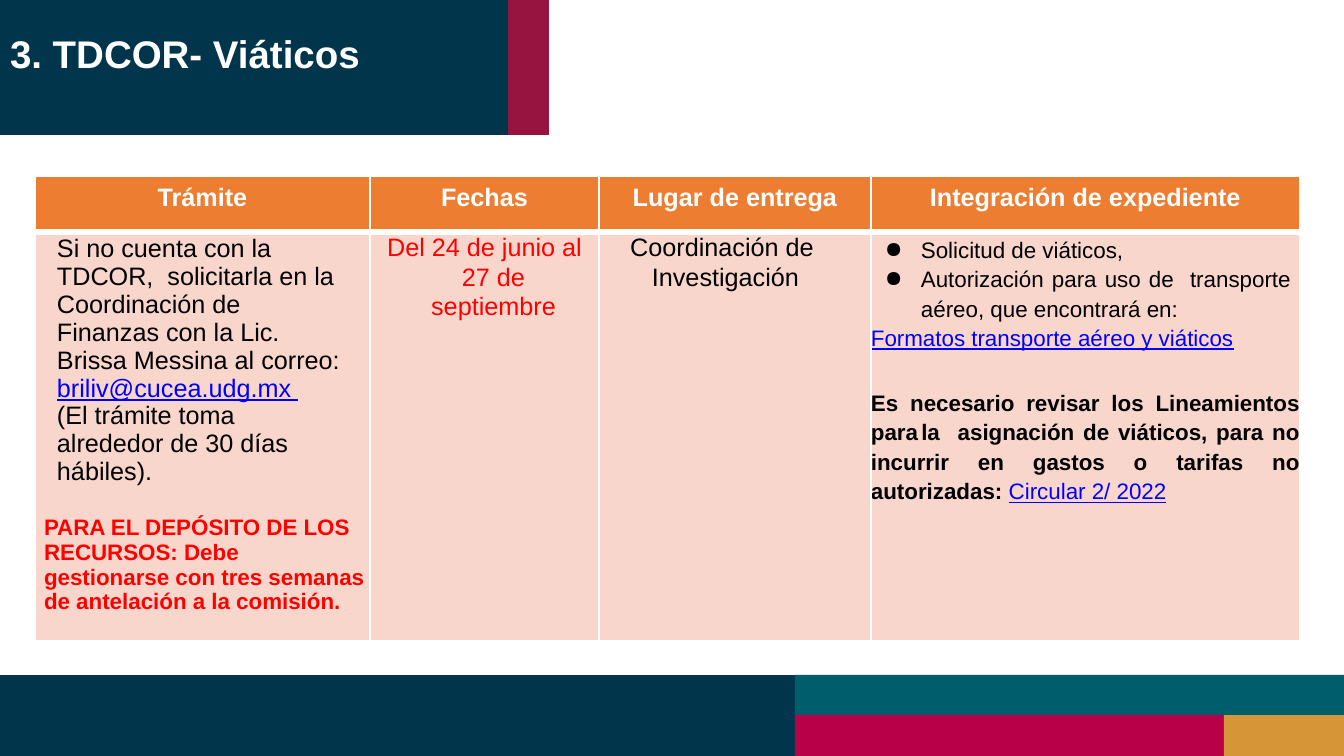
from dataclasses import dataclass

from lxml.etree import SubElement
from pptx import Presentation
from pptx.dml.color import RGBColor
from pptx.enum.shapes import MSO_SHAPE
from pptx.enum.text import PP_ALIGN
from pptx.oxml.ns import qn
from pptx.util import Pt


@dataclass(frozen=True)
class Theme:
    font: str = "Arial"
    navy: str = "00354C"
    wine: str = "971340"
    teal: str = "005D6C"
    pink: str = "B80048"
    gold: str = "D69638"
    orange: str = "ED7D31"
    peach: str = "F8D6CC"
    white: str = "FFFFFF"
    black: str = "000000"
    red: str = "FF0000"
    blue: str = "0000FF"
    title: float = 27.5
    large: float = 18
    small: float = 16
    thin: float = 1.5
    thick: float = 4.25


T = Theme()
WIDE, HIGH = 1344, 756
SCALE = 914400 / 100.8


def px(n):
    return round(n * SCALE)


def block(slide, box, color):
    shape = slide.shapes.add_shape(MSO_SHAPE.RECTANGLE, *map(px, box))
    shape.shadow.inherit = False
    shape.fill.solid()
    shape.fill.fore_color.rgb = RGBColor.from_string(color)
    shape.line.fill.background()


def style(font, size, color, bold=False):
    font.name, font.size, font.bold = T.font, Pt(size), bold
    font.color.rgb = RGBColor.from_string(color)


def write(para, parts, size=T.large, color=T.black, bold=False, align=PP_ALIGN.LEFT,
          left=0, right=0, first=0, line=1.0, before=0, bullet=None):
    """Fill a paragraph; a part given as a tuple is shown as a link."""
    para.alignment, para.line_spacing = align, line
    if before:
        para.space_before = Pt(before)
    props = para._p.get_or_add_pPr()
    for key, n in (("marL", left), ("marR", right), ("indent", first)):
        props.set(key, str(px(n)))
    if bullet:
        tint = SubElement(props, qn("a:buClr"))
        SubElement(tint, qn("a:srgbClr")).set("val", color)
        SubElement(props, qn("a:buChar")).set("char", bullet)
    else:
        SubElement(props, qn("a:buNone"))
    style(para.font, size, color, bold)
    for part in parts:
        run = para.add_run()
        if isinstance(part, tuple):
            run.text = part[0]
            style(run.font, size, T.blue)
            run.font.underline = True
        else:
            run.text = part


def frame(cell, **sides):
    """Draw white rules on the named sides of a cell."""
    props = cell._tc.get_or_add_tcPr()
    for side, width in sides.items():
        rule = SubElement(props, qn("a:ln" + side), w=str(Pt(width)))
        fill = SubElement(rule, qn("a:solidFill"))
        SubElement(fill, qn("a:srgbClr")).set("val", T.white)


def fill_cell(cell, paras, color, top):
    cell.fill.solid()
    cell.fill.fore_color.rgb = RGBColor.from_string(color)
    cell.margin_left = cell.margin_right = cell.margin_bottom = 0
    cell.margin_top = px(top)
    text = cell.text_frame
    for i, (parts, look) in enumerate(paras):
        write(text.add_paragraph() if i else text.paragraphs[0], parts, **look)


def header(slide, x, y, w, h):
    split = 508
    block(slide, (x, y, split, h), T.navy)
    block(slide, (x + split, y, w - split, h), T.wine)
    # Title
    box = slide.shapes.add_textbox(px(x + 9), px(y + 29), px(518), px(48))
    text = box.text_frame
    text.word_wrap = True
    text.margin_left = text.margin_right = text.margin_bottom = 0
    text.margin_top = px(1)
    write(text.paragraphs[0], ["3. TDCOR- Viáticos"], T.title, T.white, True, left=1)


def footer(slide, x, y, w, h):
    split, half, end = 795, h // 2, 120
    block(slide, (x, y, split, h), T.navy)
    block(slide, (x + split, y, w - split, half), T.teal)
    block(slide, (x + split, y + half, w - split - end, h - half), T.pink)
    block(slide, (x + w - end, y + half, end, h - half), T.gold)


def grid(slide, x, y, w, h):
    cols, rows = (335, 229, 272, w - 836), (56, h - 56)
    table = slide.shapes.add_table(2, 4, *map(px, (x, y, w, h))).table
    table.horz_banding = table.first_row = False
    for col, n in zip(table.columns, cols):
        col.width = px(n)
    for row, n in zip(table.rows, rows):
        row.height = px(n)

    # Text of each column: heading, top margin, paragraphs
    mid = dict(align=PP_ALIGN.CENTER, line=1.04)
    step = dict(left=22, right=28, line=0.99)
    just = dict(size=T.small, align=PP_ALIGN.JUSTIFY, line=1.18)
    item = dict(just, left=50, right=9, first=-36, bullet="●")
    alert = dict(size=T.small, color=T.red, bold=True, left=9, before=20.5)
    data = [
        ("Trámite", 3, [
            (["Si no cuenta con la TDCOR,  solicitarla en la Coordinación de Finanzas "
              "con la Lic. Brissa Messina al correo: ", ("briliv@cucea.udg.mx ",)], step),
            (["(El trámite toma alrededor de 30 días hábiles)."], step),
            (["PARA EL DEPÓSITO DE LOS RECURSOS: Debe gestionarse con tres semanas "
              "de antelación a la comisión."], alert)]),
        ("Fechas", 1, [
            (["Del 24 de junio al 27 de septiembre"],
             dict(mid, color=T.red, left=29, right=11, first=-18))]),
        ("Lugar de entrega", 1, [
            (["Coordinación de  Investigación"], dict(mid, right=19))]),
        ("Integración de expediente", 2, [
            (["Solicitud de viáticos,"], item),
            (["Autorización para uso de  transporte aéreo, que encontrará en:"], item),
            ([("Formatos transporte aéreo y viáticos",)], just),
            (["Es necesario revisar los Lineamientos para\tla  asignación de viáticos, "
              "para no incurrir en gastos o tarifas no autorizadas: ",
              ("Circular 2/ 2022",)], dict(just, bold=True, before=25.5))]),
    ]
    label = dict(color=T.white, bold=True, align=PP_ALIGN.CENTER, line=1.27)
    for i, (name, top, paras) in enumerate(data):
        head, body = table.cell(0, i), table.cell(1, i)
        frame(head, L=T.thin, R=T.thin, T=T.thin, B=T.thick)
        frame(body, L=T.thin, R=T.thin, T=T.thick)
        fill_cell(head, [([name], label)], T.orange, 0)
        fill_cell(body, paras, T.peach, top)


def main():
    deck = Presentation()
    deck.slide_width, deck.slide_height = px(WIDE), px(HIGH)
    slide = deck.slides.add_slide(deck.slide_layouts[6])
    header(slide, 0, 0, 549, 135)
    footer(slide, 0, 675, WIDE, HIGH - 675)
    grid(slide, 35, 176, 1265, 465)
    deck.save("out.pptx")


if __name__ == "__main__":
    main()
